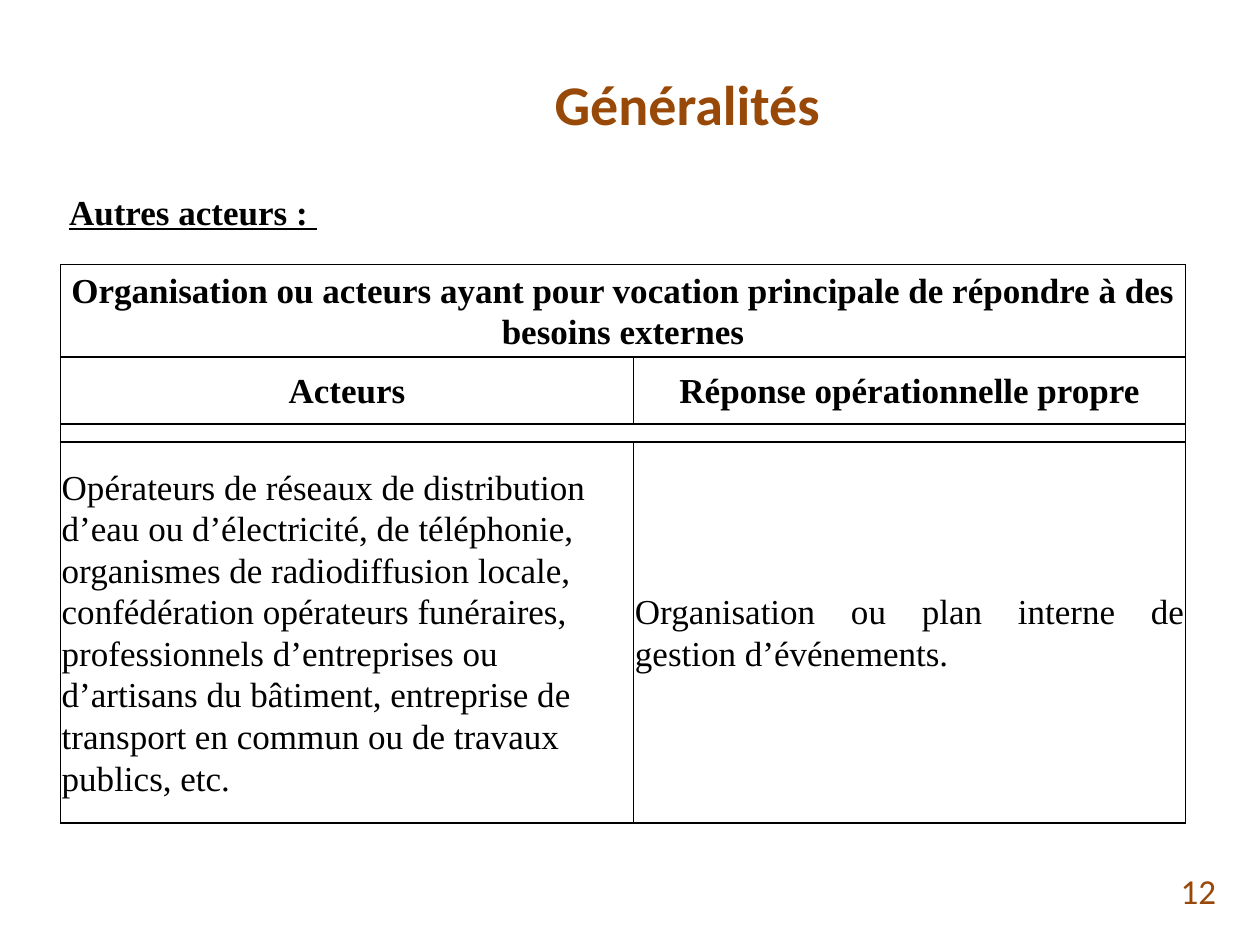
from lxml import etree
from pptx import Presentation
from pptx.dml.color import RGBColor
from pptx.enum.text import MSO_ANCHOR, PP_ALIGN
from pptx.oxml.ns import qn
from pptx.util import Inches, Pt

BROWN = RGBColor(0x98, 0x48, 0x07)
BLACK = RGBColor(0, 0, 0)
LEFT, CENTER, RIGHT, JUSTIFY = PP_ALIGN.LEFT, PP_ALIGN.CENTER, PP_ALIGN.RIGHT, PP_ALIGN.JUSTIFY
TOP, MIDDLE = MSO_ANCHOR.TOP, MSO_ANCHOR.MIDDLE
WIDTH, HEIGHT = Inches(10), Inches(7.5)
TITLE_ONLY = 5

HEADING = "Organisation ou acteurs ayant pour vocation principale de répondre à des besoins externes"
ACTORS = (
    "Opérateurs de réseaux de distribution d’eau ou d’électricité, de téléphonie, "
    "organismes de radiodiffusion locale, confédération opérateurs funéraires, "
    "professionnels d’entreprises ou d’artisans du bâtiment, entreprise de "
    "transport en commun ou de travaux publics, etc."
)
RESPONSE = "Organisation ou plan interne de gestion d’événements."


class SlideBuilder:
    """Holds the text style and the current slide; places are percentages of the slide."""

    heading_font = "Calibri"
    body_font = "Times New Roman"
    body_size = 20
    line_spacing = 1.07
    cell_margin = Inches(0.01)
    border_width = Pt(1)

    def __init__(self, slide):
        self.slide = slide

    def area(self, left, top, width, height):
        return [int(share * side / 100) for share, side in
                zip((left, top, width, height), (WIDTH, HEIGHT, WIDTH, HEIGHT))]

    def fill_text(self, frame, text, align, font=body_font, size=body_size,
                  color=BLACK, bold=False, underline=False, spacing=None):
        para = frame.paragraphs[0]
        para.text = text
        para.alignment = align
        para.line_spacing = spacing
        para.font.name = font
        para.font.size = Pt(size)
        para.font.color.rgb = color
        para.font.bold = bold
        para.font.underline = underline

    def title(self, text, place):
        title = self.slide.shapes.title
        title.left, title.top, title.width, title.height = self.area(*place)
        title.text_frame.vertical_anchor = MIDDLE
        self.fill_text(title.text_frame, text, CENTER, self.heading_font, 32, BROWN, bold=True)

    def text(self, text, place, align, anchor=TOP, **style):
        frame = self.slide.shapes.add_textbox(*self.area(*place)).text_frame
        frame.word_wrap = True
        frame.vertical_anchor = anchor
        self.fill_text(frame, text, align, **style)

    def table(self, place, column_shares, row_shares):
        """Add a plain bordered table; rows and columns are percentages of its size."""
        left, top, width, height = self.area(*place)
        table = self.slide.shapes.add_table(
            len(row_shares), len(column_shares), left, top, width, height).table
        table.first_row = table.horz_banding = False
        for column, share in zip(table.columns, column_shares):
            column.width = int(width * share / 100)
        for row, share in zip(table.rows, row_shares):
            row.height = int(height * share / 100)
        for cell in table.iter_cells():
            cell.fill.background()
            cell.vertical_anchor = MIDDLE
            cell.margin_left = cell.margin_right = self.cell_margin
            cell.margin_top = cell.margin_bottom = self.cell_margin
            self.border(cell)
            self.shrink_empty(cell)
        return table

    def border(self, cell):
        properties = cell._tc.get_or_add_tcPr()
        for position, side in enumerate(("lnL", "lnR", "lnT", "lnB")):
            line = etree.Element(qn(f"a:{side}"), w=str(self.border_width))
            fill = etree.SubElement(line, qn("a:solidFill"))
            etree.SubElement(fill, qn("a:srgbClr"), val=str(BLACK))
            properties.insert(position, line)

    def shrink_empty(self, cell):
        """Keep an empty cell from stretching its thin row."""
        para = cell.text_frame.paragraphs[0]
        etree.SubElement(para._p, qn("a:endParaRPr"), sz="500")

    def cell(self, cell, text, align, bold=False):
        self.fill_text(cell.text_frame, text, align, bold=bold, spacing=self.line_spacing)


def main():
    deck = Presentation()
    deck.slide_width, deck.slide_height = WIDTH, HEIGHT
    builder = SlideBuilder(deck.slides.add_slide(deck.slide_layouts[TITLE_ONLY]))

    builder.title("Généralités", (12.2, 4, 84.7, 13.73))
    builder.text("12", (74.2, 91.6, 23.3, 5.33), RIGHT, MIDDLE,
                 font=builder.heading_font, color=BROWN)
    builder.text("Autres acteurs : ", (4.5, 19.2, 89.6, 5.87), JUSTIFY,
                 bold=True, underline=True, spacing=builder.line_spacing)

    table = builder.table((4.8, 28, 89.3, 59.07), (50.95, 49.05), (16.5, 12, 3.2, 68.3))
    for row in (0, 2):
        table.cell(row, 0).merge(table.cell(row, 1))
    builder.cell(table.cell(0, 0), HEADING, CENTER, bold=True)
    builder.cell(table.cell(1, 0), "Acteurs", CENTER, bold=True)
    builder.cell(table.cell(1, 1), "Réponse opérationnelle propre", CENTER, bold=True)
    builder.cell(table.cell(3, 0), ACTORS, LEFT)
    builder.cell(table.cell(3, 1), RESPONSE, JUSTIFY)

    deck.save("out.pptx")


if __name__ == "__main__":
    main()
